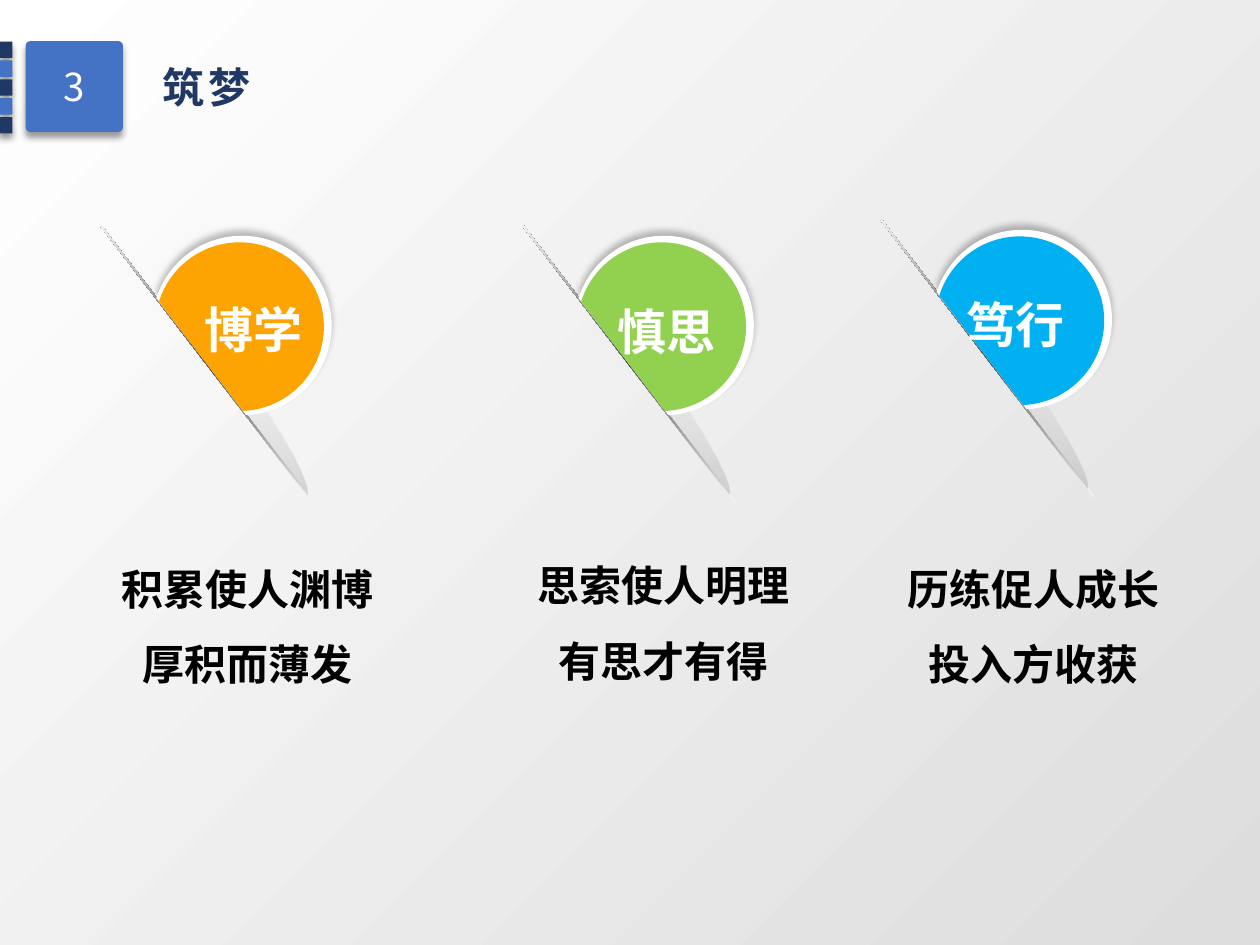
from dataclasses import dataclass
from math import asin, cos, pi, radians, sin, tan

from lxml import etree
from pptx import Presentation
from pptx.dml.color import RGBColor
from pptx.enum.shapes import MSO_SHAPE
from pptx.enum.text import MSO_ANCHOR, MSO_AUTO_SIZE, PP_ALIGN
from pptx.oxml.ns import qn
from pptx.util import Cm, Pt

RECT, ROUND = MSO_SHAPE.RECTANGLE, MSO_SHAPE.ROUNDED_RECTANGLE
LEFT, CENTER = PP_ALIGN.LEFT, PP_ALIGN.CENTER
TOP, MIDDLE = MSO_ANCHOR.TOP, MSO_ANCHOR.MIDDLE
GROW, FIXED = MSO_AUTO_SIZE.SHAPE_TO_FIT_TEXT, MSO_AUTO_SIZE.NONE
TILT = 52.5
Spot = tuple[float, float]


@dataclass(frozen=True)
class Theme:
    font: str = "Noto Sans CJK SC"
    white: str = "FFFFFF"
    black: str = "000000"
    haze: str = "DDDDDD"
    pale: str = "F2F2F2"
    grey: str = "808080"
    dark: str = "595959"
    blue: str = "4472C4"
    navy: str = "203864"
    green: str = "92D050"
    gold: str = "FDA403"
    sky: str = "00B0F0"
    body: int = 24
    label: int = 28
    number: int = 22


@dataclass(frozen=True)
class Stop:
    pos: int
    color: str
    alpha: int = 100


@dataclass(frozen=True)
class Shade:
    stops: tuple[Stop, ...]
    angle: int
    turns: bool = True


@dataclass(frozen=True)
class Pin:
    x: float
    y: float
    color: str


@dataclass(frozen=True)
class Outline:
    box: tuple[float, float, float, float]
    steps: list[tuple[str, list[Spot]]]


@dataclass(frozen=True)
class Note:
    lines: tuple[str, ...]
    box: tuple[float, float, float, float]
    size: int
    color: str
    align: PP_ALIGN = CENTER
    inset: Spot = (0.25, 0.13)
    wrap: bool = True
    lead: float = 1.5
    space: int = 0


THEME = Theme()
PAGE = Shade((Stop(0, THEME.white), Stop(100, THEME.haze)), 45)
EDGE = Shade((Stop(2, THEME.pale), Stop(50, THEME.dark), Stop(100, THEME.pale)), 180)
FOLD = Shade((Stop(26, THEME.pale, 0), Stop(100, THEME.grey, 27)), 90, False)
LEAF = Outline((-3.3, -0.43, 3.3, 0), [
    ("moveTo", [(0, -0.43)]),
    ("cubicBezTo", [(1.68, -0.42), (3.08, -0.24), (3.3, 0)]),
    ("lnTo", [(-3.3, 0)]),
    ("cubicBezTo", [(-3.08, -0.24), (-1.68, -0.42), (0, -0.43)]),
])

PINS = (
    Pin(12.69, 7.35, THEME.green),
    Pin(4.18, 7.35, THEME.gold),
    Pin(19.91, 7.23, THEME.sky),
)
NOTES = (
    Note(("思索使人明理", "有思才有得"), (9.04, 10.72, 8.66, 4.72),
         THEME.body, THEME.black, inset=(0.1, 0.05)),
    Note(("积累使人渊博", "厚积而薄发"), (2.17, 10.72, 5.64, 3.15),
         THEME.body, THEME.black, wrap=False),
    Note(("历练促人成长", "投入方收获"), (17.6, 10.72, 6.48, 3.33),
         THEME.body, THEME.black),
    Note(("慎思",), (12.2, 5.35, 3.66, 2.06), THEME.label, THEME.white, LEFT),
    Note(("博学",), (3.3, 5.31, 3.61, 2.06), THEME.label, THEME.white),
    Note(("笃行",), (19.23, 5.21, 2.49, 2.06), THEME.label, THEME.white),
    Note(("筑梦",), (3.02, 1.12, 2.41, 1.27), THEME.body, THEME.navy, LEFT,
         wrap=False, lead=1, space=270),
)


def tint(parent, color: str, alpha: int) -> None:
    node = etree.SubElement(parent, qn("a:srgbClr"), val=color)
    if alpha < 100:
        etree.SubElement(node, qn("a:alpha"), val=str(alpha * 1000))


def paint(shape, fill: str | Shade) -> None:
    shape.shadow.inherit = False
    shape.line.fill.background()
    if isinstance(fill, str):
        shape.fill.solid()
        shape.fill.fore_color.rgb = RGBColor.from_string(fill)
        return
    shape.fill.background()
    props = shape._element.spPr
    grad = etree.Element(qn("a:gradFill"), rotWithShape=str(int(fill.turns)))
    stops = etree.SubElement(grad, qn("a:gsLst"))
    for stop in fill.stops:
        node = etree.SubElement(stops, qn("a:gs"), pos=str(stop.pos * 1000))
        tint(node, stop.color, stop.alpha)
    etree.SubElement(grad, qn("a:lin"), ang=str(fill.angle * 60000), scaled="0")
    props.replace(props.find(qn("a:noFill")), grad)


def cast(shape, alpha: int, angle: int) -> None:
    holder = shape._element.spPr.find(qn("a:effectLst"))
    node = etree.SubElement(
        holder, qn("a:outerShdw"), blurRad=str(Pt(4)), dist=str(Pt(3)),
        dir=str(angle * 60000), algn="ctr", rotWithShape="0")
    tint(node, THEME.black, alpha)


def block(slide, kind, box: tuple[float, ...], fill: str | Shade):
    shape = slide.shapes.add_shape(kind, *map(Cm, box))
    paint(shape, fill)
    if kind == ROUND:
        shape.adjustments[0] = 0.05
        cast(shape, 40, 90)
    return shape


def write(shape, note: Note, anchor=TOP, fit=GROW, bold: bool = True) -> None:
    frame = shape.text_frame
    side, edge = map(Cm, note.inset)
    setup = dict(word_wrap=note.wrap, auto_size=fit, vertical_anchor=anchor,
                 margin_left=side, margin_right=side,
                 margin_top=edge, margin_bottom=edge)
    for key, value in setup.items():
        setattr(frame, key, value)
    for i, line in enumerate(note.lines):
        para = frame.add_paragraph() if i else frame.paragraphs[0]
        para.alignment, para.line_spacing = note.align, note.lead
        run = para.add_run()
        run.text = line
        for key, value in dict(name=THEME.font, size=Pt(note.size), bold=bold).items():
            setattr(run.font, key, value)
        run.font.color.rgb = RGBColor.from_string(note.color)
        props = run._r.get_or_add_rPr()
        etree.SubElement(props, qn("a:ea"), typeface=THEME.font)
        if note.space:
            props.set("spc", str(note.space))


def dome(x: float, y: float, size: float) -> Outline:
    def spot(turn: float, pull: float = 0) -> Spot:
        return (x + size * (cos(turn) - pull * sin(turn)),
                y + size * (sin(turn) + pull * cos(turn)))

    def arc(start: float, stop: float) -> tuple[str, list[Spot]]:
        pull = 4 / 3 * tan((stop - start) / 4)
        return "cubicBezTo", [spot(start, pull), spot(stop, -pull), spot(stop)]

    dip = asin(-y / size)
    return Outline((x - size, y - size, x + size, 0), [
        ("moveTo", [spot(-pi / 2)]), arc(-pi / 2, 0), arc(0, dip),
        ("lnTo", [spot(pi - dip)]), arc(pi - dip, pi), arc(pi, 1.5 * pi),
    ])


def form(slide, pin: Pin, outline: Outline, fill: str | Shade):
    west, north, east, south = map(Cm, outline.box)
    maker = slide.shapes.build_freeform(west, north, scale=1.0)
    maker.add_line_segments([(east, north), (east, south), (west, south)])
    shape = maker.convert_to_shape()
    path = shape._element.spPr.find(".//" + qn("a:path"))
    for node in list(path):
        path.remove(node)
    for kind, spots in outline.steps:
        step = etree.SubElement(path, qn("a:" + kind))
        for x, y in spots:
            etree.SubElement(step, qn("a:pt"), x=str(Cm(x) - west), y=str(Cm(y) - north))
    etree.SubElement(path, qn("a:close"))
    midx, midy = (west + east) / 2, (north + south) / 2
    turn = radians(TILT)
    shape.left = int(Cm(pin.x) + midx * cos(turn) - midy * sin(turn) - shape.width / 2)
    shape.top = int(Cm(pin.y) + midx * sin(turn) + midy * cos(turn) - shape.height / 2)
    shape.rotation = TILT
    paint(shape, fill)
    return shape


def draw(slide, pin: Pin) -> None:
    wide, thin = 7.04, 0.03
    edge = block(slide, RECT, (pin.x - wide / 2, pin.y - thin / 2, wide, thin), EDGE)
    edge.rotation = TILT
    form(slide, pin, LEAF, FOLD)
    rim = form(slide, pin, dome(-0.2, -1.03, 1.81), THEME.white)
    cast(rim, 25, 270)
    form(slide, pin, dome(-0.21, -0.98, 1.7), pin.color)


def main() -> None:
    deck = Presentation()
    deck.slide_width, deck.slide_height = Cm(25.4), Cm(19.05)
    slide = deck.slides.add_slide(deck.slide_layouts[6])
    block(slide, RECT, (0, 0, 25.4, 19.05), PAGE)
    for pin in PINS:
        draw(slide, pin)
    for i in range(5):
        color = THEME.blue if i % 2 else THEME.navy
        block(slide, ROUND, (-0.03, 0.84 + 0.38 * i, 0.28, 0.33), color)
    box = (0.52, 0.83, 1.96, 1.83)
    badge = block(slide, ROUND, box, THEME.blue)
    write(badge, Note(("3",), box, THEME.number, THEME.white, lead=1), MIDDLE, FIXED, False)
    for note in NOTES:
        write(slide.shapes.add_textbox(*map(Cm, note.box)), note)
    deck.save("out.pptx")


if __name__ == "__main__":
    main()
